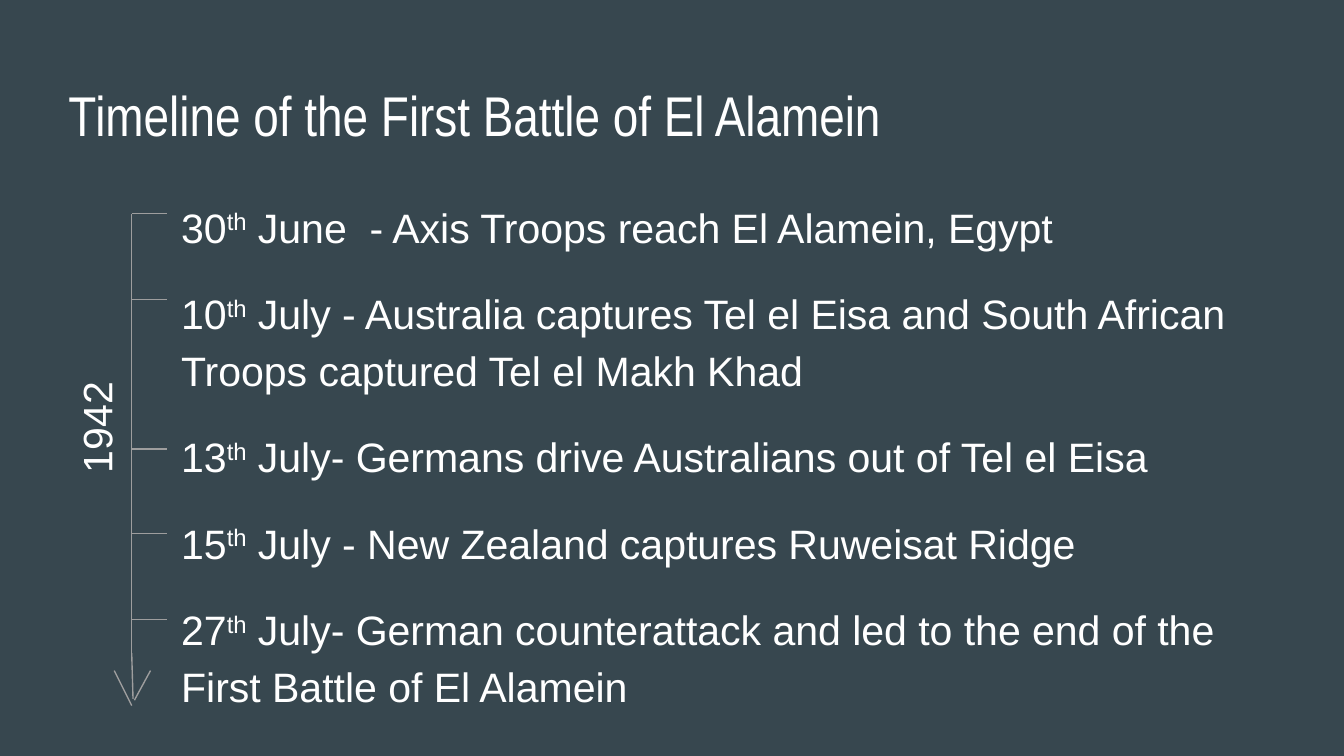
from pptx import Presentation
from pptx.dml.color import RGBColor
from pptx.enum.shapes import MSO_CONNECTOR
from pptx.enum.text import MSO_ANCHOR
from pptx.oxml.ns import qn
from pptx.util import Inches, Pt
from lxml import etree

SLATE = RGBColor(0x37, 0x47, 0x4F)
WHITE = RGBColor(0xFF, 0xFF, 0xFF)
GREY = RGBColor(0x9E, 0x9E, 0x9E)

TITLE_FORMAT = {"name": "Arial Narrow", "size": Pt(30)}
BODY_FORMAT = {"name": "Arial", "size": Pt(22)}
EVENT_SPACING = {"line_spacing": 1.15, "space_after": Pt(16)}
FRAME_FORMAT = {
    "word_wrap": True,
    "vertical_anchor": MSO_ANCHOR.TOP,
    "margin_left": Inches(0.1),
    "margin_right": Inches(0.1),
    "margin_top": Inches(0.1),
    "margin_bottom": Inches(0.1),
}


def add_frame(left, top, width, height):
    box = slide.shapes.add_textbox(
        Inches(left), Inches(top), Inches(width), Inches(height)
    )
    for attribute, value in FRAME_FORMAT.items():
        setattr(box.text_frame, attribute, value)
    return box


def add_words(paragraph, words, font_format):
    run = paragraph.add_run()
    run.text = words
    for attribute, value in font_format.items():
        setattr(run.font, attribute, value)
    run.font.color.rgb = WHITE
    return run


presentation = Presentation()
presentation.slide_width = Inches(10)
presentation.slide_height = Inches(10) * 9 // 16
slide = presentation.slides.add_slide(presentation.slide_layouts[6])
slide.background.fill.solid()
slide.background.fill.fore_color.rgb = SLATE

heading = add_frame(0.41, 0.5, 9.32, 0.63)
add_words(
    heading.text_frame.paragraphs[0],
    "Timeline of the First Battle of El Alamein",
    TITLE_FORMAT,
)

events = [
    ("30", " June  - Axis Troops reach El Alamein, Egypt"),
    ("10", " July - Australia captures Tel el Eisa and South African "
           "Troops captured Tel el Makh Khad"),
    ("13", " July- Germans drive Australians out of Tel el Eisa"),
    ("15", " July - New Zealand captures Ruweisat Ridge"),
    ("27", " July- German counterattack and led to the end of the "
           "First Battle of El Alamein"),
]
event_list = add_frame(1.25, 1.35, 8.4, 3.65).text_frame
for index, (day, event) in enumerate(events):
    entry = event_list.add_paragraph() if index else event_list.paragraphs[0]
    for attribute, value in EVENT_SPACING.items():
        setattr(entry, attribute, value)
    add_words(entry, day, BODY_FORMAT)
    ordinal = add_words(entry, "th", BODY_FORMAT)
    ordinal.font._element.set("baseline", "30000")
    add_words(entry, event, BODY_FORMAT)

axis_x = 0.98
event_ticks = [(1.24, y, axis_x, y) for y in (1.59, 2.23, 3.34, 3.97, 4.61)]
axis_and_arrow = [
    (axis_x, 1.59, axis_x, 4.88),
    (0.99, 5.2, axis_x, 4.86),
    (1.12, 4.99, 1, 5.21),
    (axis_x, 5.25, 0.85, 4.99),
]
for ends in event_ticks + axis_and_arrow:
    stroke = slide.shapes.add_connector(
        MSO_CONNECTOR.STRAIGHT, *[Inches(value) for value in ends]
    )
    stroke.line.color.rgb = GREY
    stroke.line.width = Pt(0.75)
    etree.SubElement(stroke._element.spPr, qn("a:effectLst"))

year = add_frame(0.16, 3, 0.89, 0.35)
year.rotation = 270
add_words(year.text_frame.paragraphs[0], "1942", BODY_FORMAT)

presentation.save("out.pptx")
